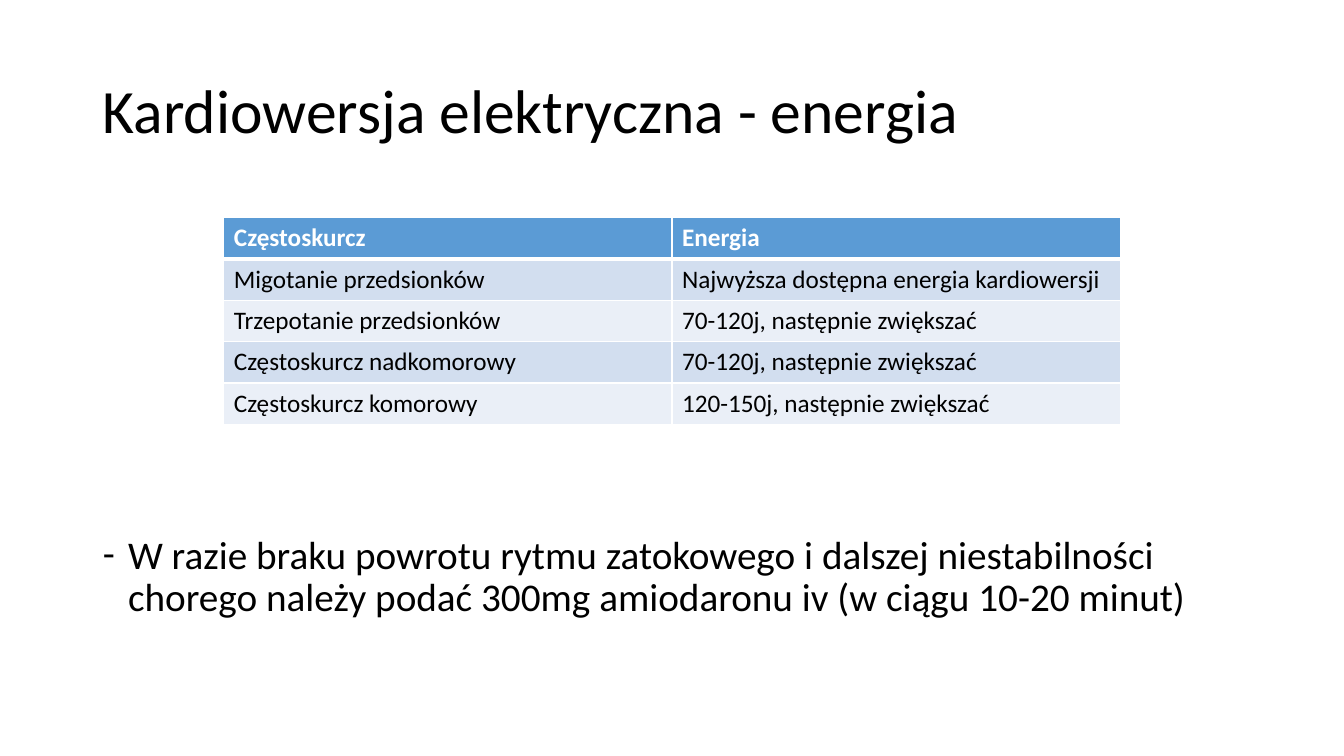
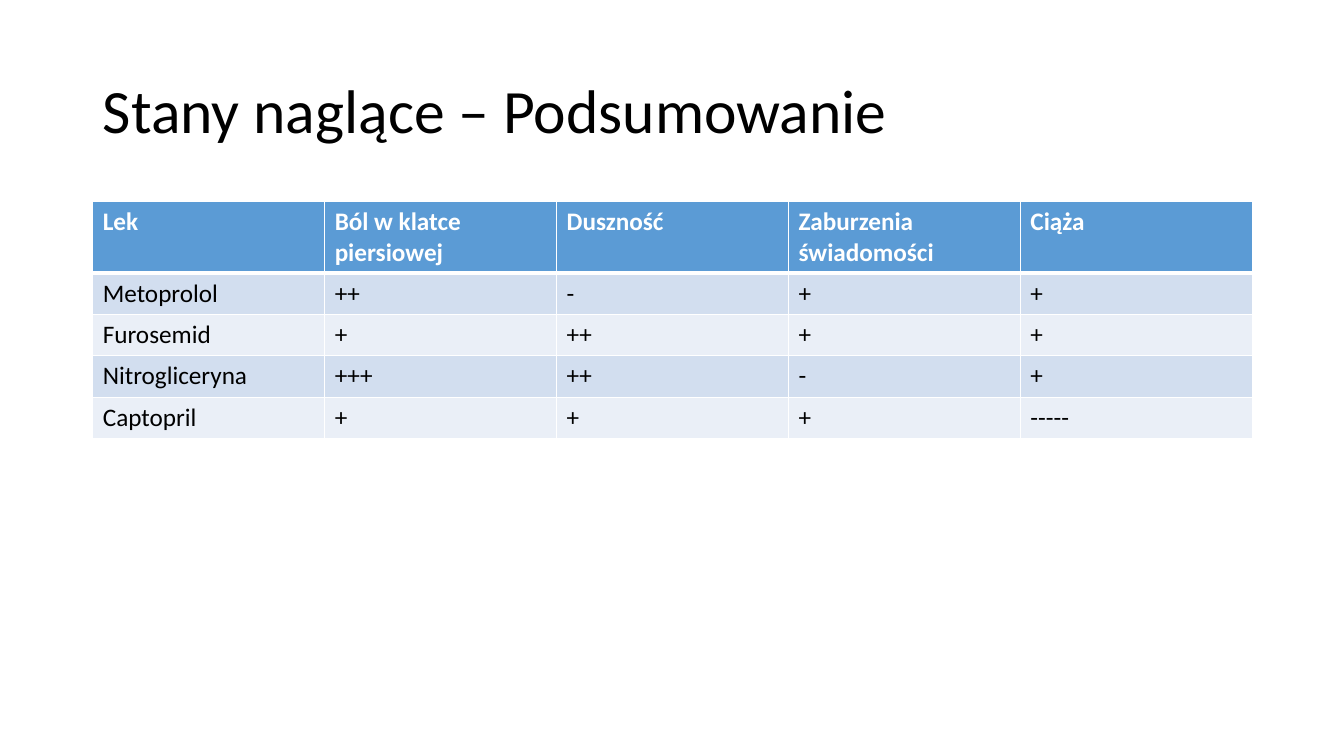
from dataclasses import dataclass

from pptx import Presentation
from pptx.dml.color import RGBColor as RGB
from pptx.enum.text import MSO_ANCHOR, MSO_AUTO_SIZE, PP_ALIGN
from pptx.oxml.ns import qn
from pptx.util import Inches, Pt
from lxml.etree import SubElement


@dataclass(frozen=True)
class Theme:
    font: str = "Calibri"
    text: str = "000000"
    white: str = "FFFFFF"
    header: str = "5B9BD5"
    bands: tuple = ("D2DEEF", "EAEFF7")
    title_size: int = 44
    body_size: int = 28
    table_size: int = 18
    border: int = 1
    header_rule: int = 3


THEME = Theme()
TITLE_ONLY, TITLE_AND_BODY = 5, 1
MARGIN, CONTENT_WIDTH = 0.92, 11.5
ROW_HEIGHT = 0.41

SLIDES = [
    {
        "title": "Kardiowersja elektryczna - energia",
        "table_box": (2.22, 2.16, 8.89),
        "header_height": ROW_HEIGHT,
        "rows": [
            ("Częstoskurcz", "Energia"),
            ("Migotanie przedsionków", "Najwyższa dostępna energia kardiowersji"),
            ("Trzepotanie przedsionków", "70-120j, następnie zwiększać"),
            ("Częstoskurcz nadkomorowy", "70-120j, następnie zwiększać"),
            ("Częstoskurcz komorowy", "120-150j, następnie zwiększać"),
        ],
        "bullets": [
            "W razie braku powrotu rytmu zatokowego i dalszej niestabilności "
            "chorego należy podać 300mg amiodaronu iv (w ciągu 10-20 minut)",
        ],
    },
    {
        "title": "Stany naglące – Podsumowanie",
        "table_box": (MARGIN, 2, CONTENT_WIDTH),
        "header_height": 0.69,
        "rows": [
            ("Lek", "Ból w klatce piersiowej", "Duszność", "Zaburzenia świadomości", "Ciąża"),
            ("Metoprolol", "++", "-", "+", "+"),
            ("Furosemid", "+", "++", "+", "+"),
            ("Nitrogliceryna", "+++", "++", "-", "+"),
            ("Captopril", "+", "+", "+", "-----"),
        ],
        "bullets": [],
    },
]


def place(sp, left, top, width, height):
    sp.left, sp.top = Inches(left), Inches(top)
    sp.width, sp.height = Inches(width), Inches(height)


def add_run(p, text, size, color=THEME.text, bold=False):
    r = p.add_run()
    r.text = text
    r.font.name, r.font.size, r.font.bold = THEME.font, Pt(size), bold
    r.font.color.rgb = RGB.from_string(color)


def prepare_frame(sp, anchor):
    tf = sp.text_frame
    tf.word_wrap, tf.auto_size = True, MSO_AUTO_SIZE.NONE
    tf.vertical_anchor = anchor
    return tf


def set_title(slide, text):
    sp = slide.shapes.title
    place(sp, MARGIN, 0.4, CONTENT_WIDTH, 1.45)
    p = prepare_frame(sp, MSO_ANCHOR.MIDDLE).paragraphs[0]
    p.alignment, p.line_spacing = PP_ALIGN.LEFT, 0.9
    add_run(p, text, THEME.title_size)


def set_bullets(slide, bullets):
    sp = slide.placeholders[1]
    place(sp, MARGIN, 5.26, CONTENT_WIDTH, 1.49)
    tf = prepare_frame(sp, MSO_ANCHOR.TOP)
    for i, text in enumerate(bullets):
        p = tf.add_paragraph() if i else tf.paragraphs[0]
        p.line_spacing, p.space_before = 0.9, Pt(10)
        pPr = p._p.get_or_add_pPr()
        pPr.set("marL", str(Inches(0.25)))
        pPr.set("indent", str(Inches(-0.25)))
        SubElement(pPr, qn("a:buFont"), typeface=THEME.font)
        SubElement(pPr, qn("a:buChar"), char="-")
        add_run(p, text, THEME.body_size)


def set_borders(cell, top, bottom):
    tcPr = cell._tc.get_or_add_tcPr()
    widths = {"lnL": THEME.border, "lnR": THEME.border, "lnT": top, "lnB": bottom}
    for side, width in widths.items():
        ln = SubElement(tcPr, qn(f"a:{side}"), w=str(Pt(width)))
        fill = SubElement(ln, qn("a:solidFill"))
        SubElement(fill, qn("a:srgbClr"), val=THEME.white)


def add_table(slide, rows, box, header_height):
    left, top, width = box
    heights = [header_height] + [ROW_HEIGHT] * (len(rows) - 1)
    table = slide.shapes.add_table(
        len(rows), len(rows[0]), Inches(left), Inches(top), Inches(width), Inches(sum(heights))
    ).table
    for i, (values, height) in enumerate(zip(rows, heights)):
        table.rows[i].height = Inches(height)
        is_header = i == 0
        fill = THEME.header if is_header else THEME.bands[(i - 1) % 2]
        color = THEME.white if is_header else THEME.text
        above = THEME.header_rule if i == 1 else THEME.border
        below = THEME.header_rule if is_header else THEME.border
        for j, text in enumerate(values):
            cell = table.cell(i, j)
            set_borders(cell, above, below)
            cell.fill.solid()
            cell.fill.fore_color.rgb = RGB.from_string(fill)
            add_run(cell.text_frame.paragraphs[0], text, THEME.table_size, color, is_header)


def main():
    prs = Presentation()
    prs.slide_width, prs.slide_height = Inches(13.33), Inches(7.5)
    for content in SLIDES:
        layout = TITLE_AND_BODY if content["bullets"] else TITLE_ONLY
        slide = prs.slides.add_slide(prs.slide_layouts[layout])
        set_title(slide, content["title"])
        add_table(slide, content["rows"], content["table_box"], content["header_height"])
        if content["bullets"]:
            set_bullets(slide, content["bullets"])
    prs.save("out.pptx")


if __name__ == "__main__":
    main()
